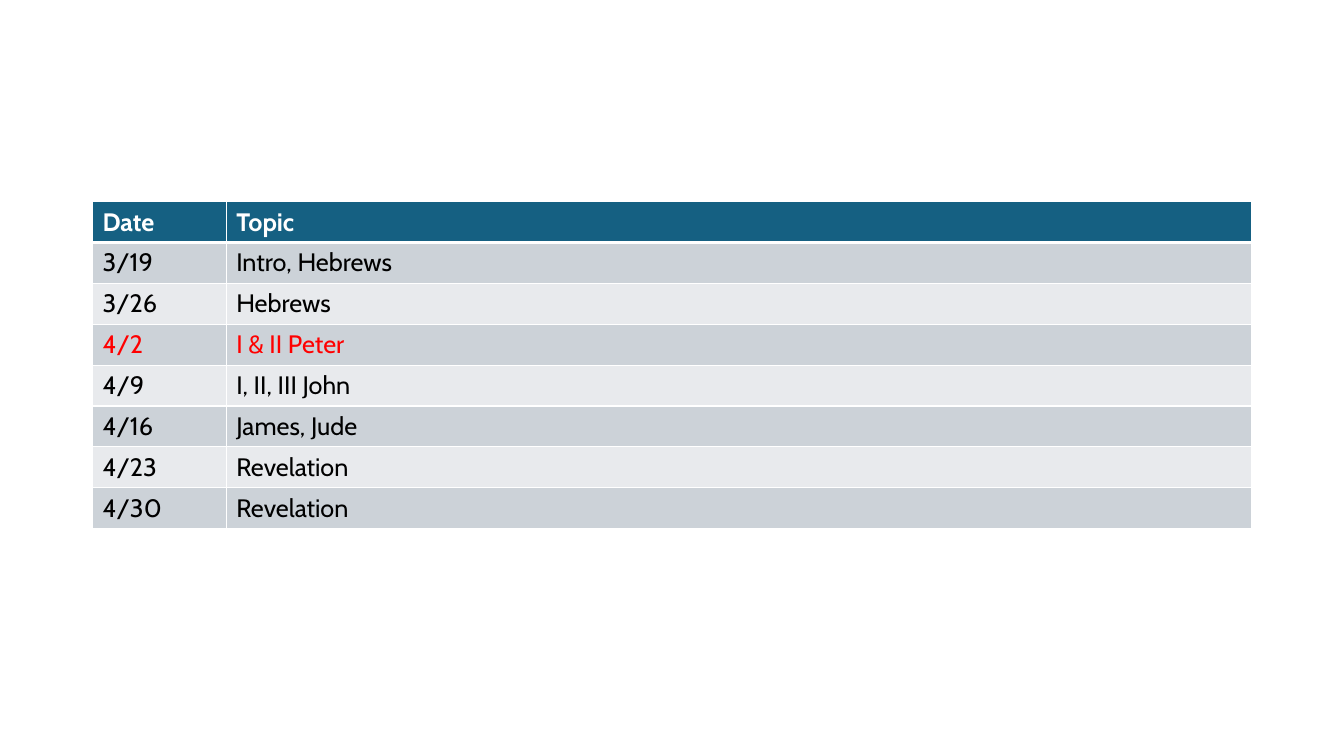
from lxml.etree import SubElement
from pptx import Presentation
from pptx.dml.color import RGBColor as Rgb
from pptx.oxml.ns import qn
from pptx.util import Cm, Pt

FONT = "Cabin"
WHITE, BLACK, RED = "FFFFFF", "000000", "FF0000"
HEAD, DARK, LIGHT = "156082", "CCD2D8", "E8EAED"
WIDTHS = (3.37, 25.84)
HEIGHT = 1.03
ROWS = (
    ("Date", "Topic"),
    ("3/19", "Intro, Hebrews"),
    ("3/26", "Hebrews"),
    ("4/2", "I & II Peter"),
    ("4/9", "I, II, III John"),
    ("4/16", "James, Jude"),
    ("4/23", "Revelation"),
    ("4/30", "Revelation"),
)
MARKED = "4/2"


def paint(fill, color):
    fill.solid()
    fill.fore_color.rgb = Rgb.from_string(color)


def edge(cell, side, width):
    """Draw a white border on one side: L, R, T or B."""
    line = SubElement(cell._tc.get_or_add_tcPr(), qn(f"a:ln{side}"), w=str(Pt(width)))
    solid = SubElement(line, qn("a:solidFill"))
    SubElement(solid, qn("a:srgbClr"), val=WHITE)


def write(cell, text, color, bold):
    cell.text = text
    font = cell.text_frame.paragraphs[0].font
    font.name, font.size, font.bold = FONT, Pt(18), bold
    font.color.rgb = Rgb.from_string(color)


def add_plan(slide, left, top):
    frame = slide.shapes.add_table(
        len(ROWS), len(WIDTHS), Cm(left), Cm(top),
        Cm(sum(WIDTHS)), Cm(HEIGHT * len(ROWS)))
    table = frame.table
    for col, width in zip(table.columns, WIDTHS):
        col.width = Cm(width)
    for i, texts in enumerate(ROWS):
        first = i == 0
        back = HEAD if first else DARK if i % 2 else LIGHT
        ink = WHITE if first else RED if texts[0] == MARKED else BLACK
        sides = {"L": 1, "R": 1, "T": 3 if i == 1 else 1, "B": 3 if first else 1}
        for cell, text in zip(table.rows[i].cells, texts):
            for side, width in sides.items():
                edge(cell, side, width)
            paint(cell.fill, back)
            write(cell, text, ink, first)


def main():
    prs = Presentation()
    prs.slide_width, prs.slide_height = Cm(33.87), Cm(19.05)
    slide = prs.slides.add_slide(prs.slide_layouts[6])
    paint(slide.background.fill, WHITE)
    add_plan(slide, 2.33, 5.08)
    prs.save("out.pptx")


if __name__ == "__main__":
    main()
